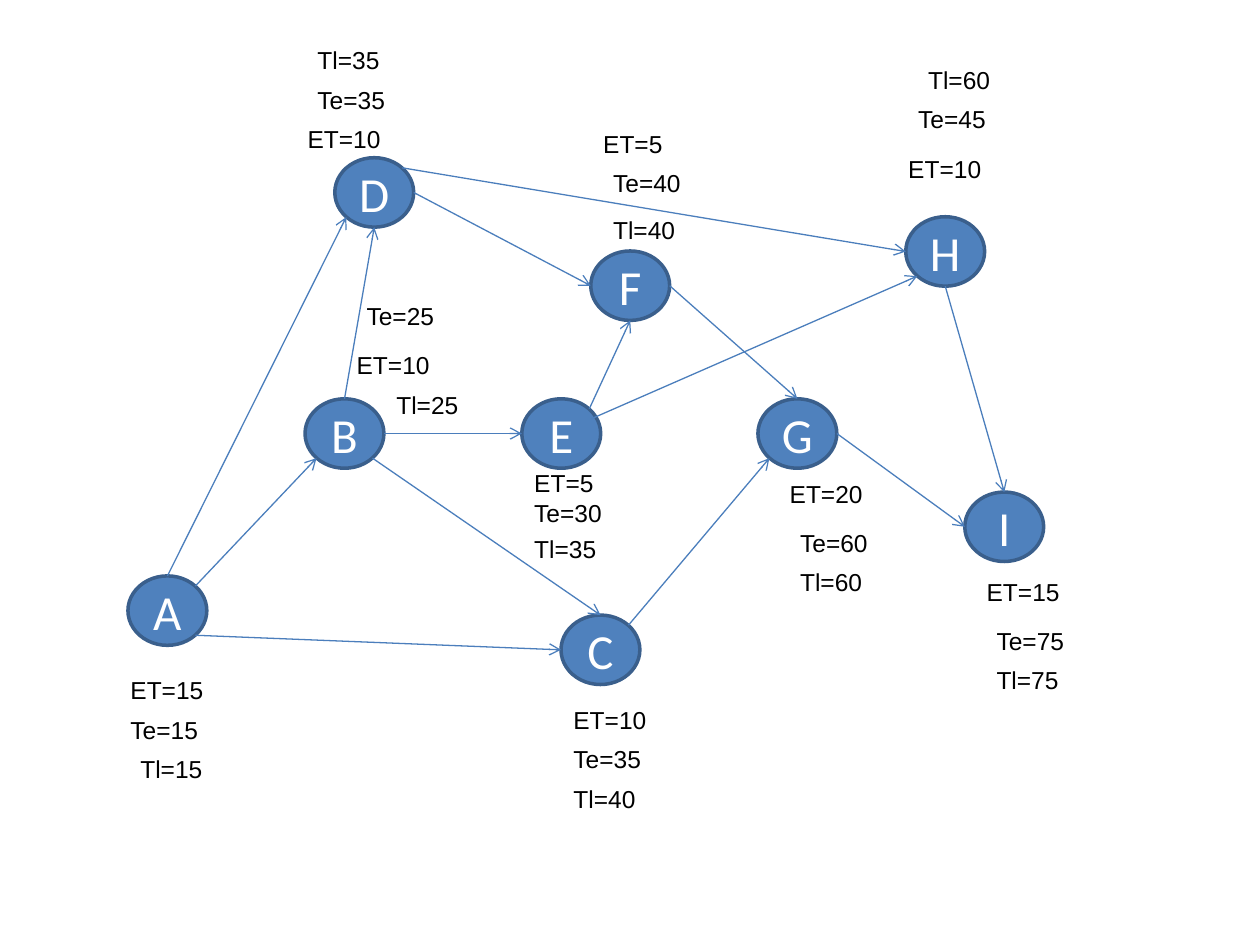
import pptx
import pptx.dml.color
import pptx.enum.shapes
import pptx.enum.text
import pptx.oxml
import pptx.oxml.ns
import pptx.util
from pptx.util import Cm

NODES = {
    "A": (2.58, 11.61),
    "B": (6.15, 8.04),
    "C": (11.31, 12.4),
    "D": (6.75, 3.18),
    "E": (10.52, 8.04),
    "F": (11.91, 5.06),
    "G": (15.28, 8.04),
    "H": (18.26, 4.37),
    "I": (19.45, 9.92),
}
ARROWS = [
    ("A", "top right", "B", "bottom left"),
    ("A", "bottom right", "C", "left"),
    ("B", "bottom right", "C", "top"),
    ("B", "top", "D", "bottom"),
    ("A", "top", "D", "bottom left"),
    ("B", "right", "E", "left"),
    ("D", "right", "F", "left"),
    ("E", "top right", "F", "bottom"),
    ("F", "right", "G", "top"),
    ("C", "top right", "G", "bottom left"),
    ("D", "top right", "H", "left"),
    ("E", "inner right", "H", "bottom left"),
    ("G", "right", "I", "left"),
    ("H", "bottom", "I", "top"),
]
TIMES = [
    ("ET=15", 2.38, 13.49), ("Te=15", 2.38, 14.29), ("Tl=15", 2.58, 15.08),
    ("ET=10", 6.94, 6.94), ("Te=25", 7.14, 5.95), ("Tl=25", 7.74, 7.74),
    ("ET=10", 11.31, 14.09), ("Te=35", 11.31, 14.88), ("Tl=40", 11.31, 15.68),
    ("ET=10", 5.95, 2.38), ("Te=35", 6.15, 1.59), ("Tl=35", 6.15, 0.79),
    ("ET=5", 10.52, 9.32), ("Te=30", 10.52, 9.92), ("Tl=35", 10.52, 10.64),
    ("ET=5", 11.91, 2.48), ("Te=40", 12.11, 3.27), ("Tl=40", 12.11, 4.22),
    ("ET=20", 15.67, 9.53), ("Te=60", 15.88, 10.52), ("Tl=60", 15.88, 11.31),
    ("ET=10", 18.06, 2.98), ("Te=45", 18.26, 1.98), ("Tl=60", 18.46, 1.19),
    ("ET=15", 19.64, 11.51), ("Te=75", 19.84, 12.5), ("Tl=75", 19.84, 13.29),
]
NODE_WIDTH, NODE_HEIGHT = 1.59, 1.4
LABEL_HEIGHT = 0.87
LABEL_WIDTHS = {"ET": 1.98, "Te": 1.88, "Tl": 1.78}
MISSING_DIGIT = 0.25
DIAGONAL = 0.71
SITES = {
    "top": (0, -1),
    "bottom": (0, 1),
    "left": (-1, 0),
    "right": (1, 0),
    "top right": (DIAGONAL, -DIAGONAL),
    "bottom left": (-DIAGONAL, DIAGONAL),
    "bottom right": (DIAGONAL, DIAGONAL),
    "inner right": (0.75, -0.42),
}
NODE_FONT = {"name": "Calibri", "size": pptx.util.Pt(28)}
LABEL_FONT = {"name": "Arial", "size": pptx.util.Pt(14)}
LABEL_FRAME = {
    "word_wrap": False,
    "auto_size": pptx.enum.text.MSO_AUTO_SIZE.SHAPE_TO_FIT_TEXT,
}


def paint(color_format, value):
    color_format.rgb = pptx.dml.color.RGBColor.from_string(value)


def apply(target, values):
    for name, value in values.items():
        setattr(target, name, value)


def write(box, text, font, color):
    span = box.text_frame.paragraphs[0].add_run()
    span.text = text
    apply(span.font, font)
    paint(span.font.color, color)


def add_node(page, name):
    left, top = NODES[name]
    node = page.shapes.add_shape(
        pptx.enum.shapes.MSO_SHAPE.OVAL,
        Cm(left), Cm(top), Cm(NODE_WIDTH), Cm(NODE_HEIGHT))
    node.shadow.inherit = False
    node.fill.solid()
    paint(node.fill.fore_color, "4F81BD")
    paint(node.line.color, "3A5F8C")
    node.line.width = pptx.util.Pt(2)
    node.text_frame.vertical_anchor = pptx.enum.text.MSO_ANCHOR.MIDDLE
    node.text_frame.paragraphs[0].alignment = pptx.enum.text.PP_ALIGN.CENTER
    write(node, name, NODE_FONT, "FFFFFF")


def site_position(name, site):
    left, top = NODES[name]
    across, down = SITES[site]
    return (Cm(left + NODE_WIDTH / 2 * (1 + across)),
            Cm(top + NODE_HEIGHT / 2 * (1 + down)))


def add_arrow(page, source, start, target, end):
    arrow = page.shapes.add_connector(
        pptx.enum.shapes.MSO_CONNECTOR.STRAIGHT,
        *site_position(source, start), *site_position(target, end))
    paint(arrow.line.color, "4B7EBC")
    arrow.line.width = pptx.util.Pt(0.75)
    namespace = pptx.oxml.ns.nsdecls("a")
    arrow.line._get_or_add_ln().append(
        pptx.oxml.parse_xml(f'<a:tailEnd {namespace} type="arrow"/>'))
    arrow._element.spPr.append(
        pptx.oxml.parse_xml(f"<a:effectLst {namespace}/>"))


def add_label(page, text, left, top):
    width = LABEL_WIDTHS[text[:2]] - MISSING_DIGIT * (5 - len(text))
    box = page.shapes.add_textbox(
        Cm(left), Cm(top), Cm(width), Cm(LABEL_HEIGHT))
    apply(box.text_frame, LABEL_FRAME)
    write(box, text, LABEL_FONT, "000000")


def main():
    deck = pptx.Presentation()
    deck.slide_width, deck.slide_height = Cm(25.4), Cm(19.05)
    page = deck.slides.add_slide(deck.slide_layouts[6])
    for name in NODES:
        add_node(page, name)
    for arrow in ARROWS:
        add_arrow(page, *arrow)
    for label in TIMES:
        add_label(page, *label)
    deck.save("out.pptx")


if __name__ == "__main__":
    main()
